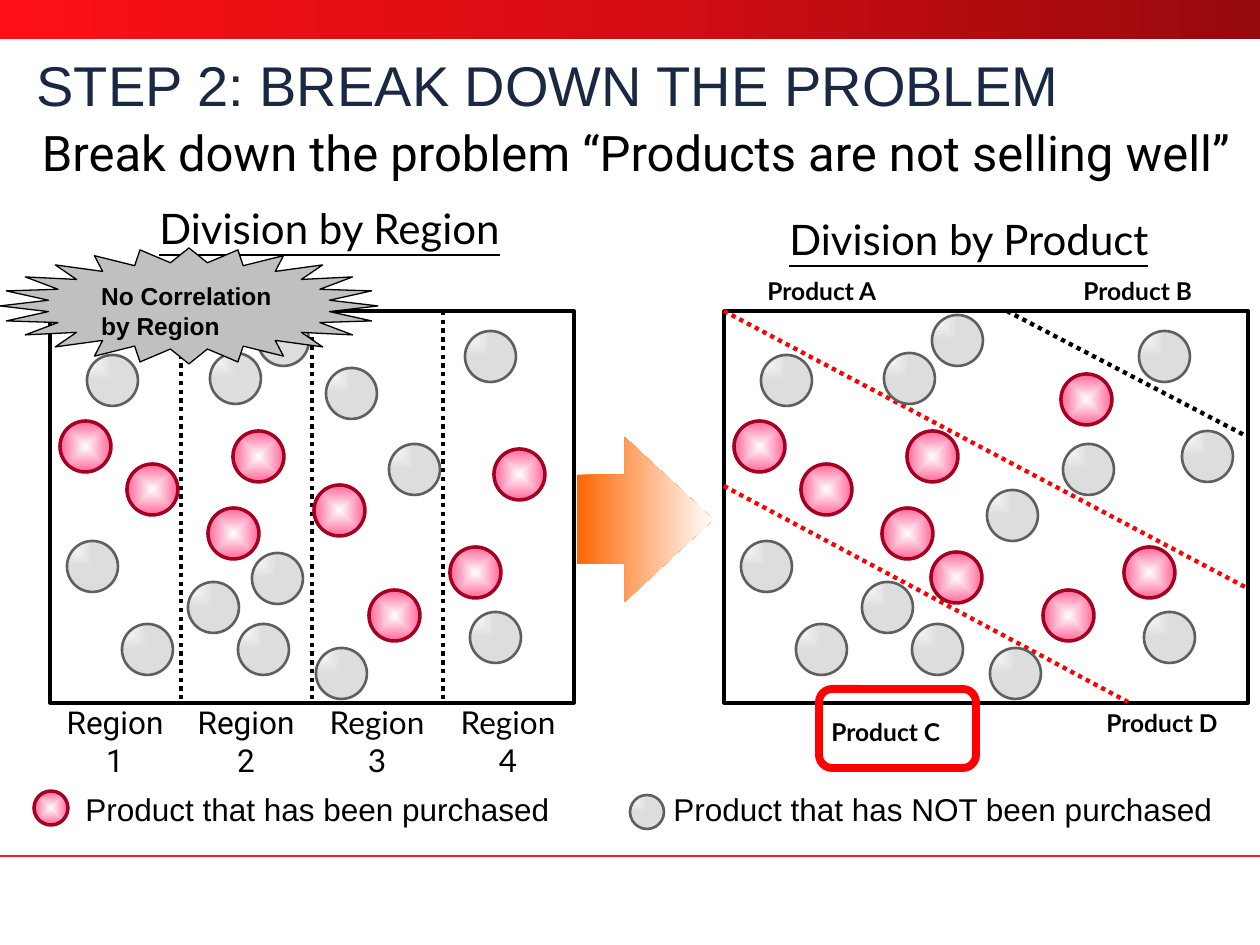
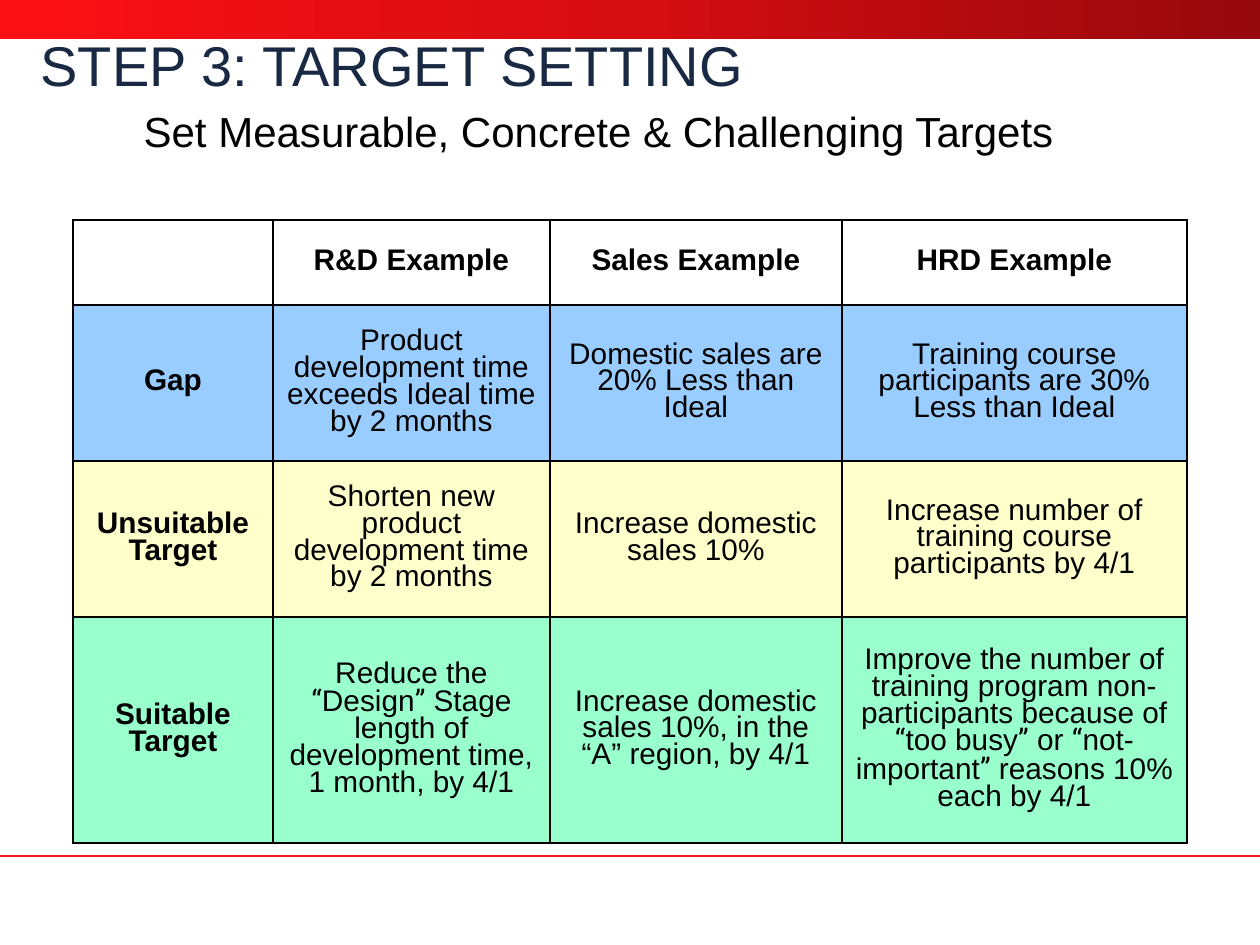
from dataclasses import dataclass
from typing import NamedTuple

import lxml.etree
import pptx
import pptx.dml.color
import pptx.enum.dml
import pptx.enum.shapes
import pptx.enum.text
import pptx.oxml.ns
import pptx.presentation
import pptx.shapes.autoshape
import pptx.shapes.connector
import pptx.slide
import pptx.util

RGBColor = pptx.dml.color.RGBColor
MSO_SHAPE = pptx.enum.shapes.MSO_SHAPE
PP_ALIGN = pptx.enum.text.PP_ALIGN
MSO_ANCHOR = pptx.enum.text.MSO_ANCHOR
qn = pptx.oxml.ns.qn

PX_PER_INCH = 126
BLACK = RGBColor(0x00, 0x00, 0x00)
WHITE = RGBColor(0xFF, 0xFF, 0xFF)
RED = RGBColor(0xFF, 0x00, 0x00)
NAVY = RGBColor(0x19, 0x29, 0x43)
BRIGHT_RED = RGBColor(0xFC, 0x10, 0x15)
BAND_RED = RGBColor(0xD5, 0x0D, 0x12)
DARK_RED = RGBColor(0x96, 0x09, 0x0D)
FOOTER_RED = RGBColor(0xED, 0x1F, 0x24)
ORANGE = RGBColor(0xFF, 0x66, 0x00)
PINK = RGBColor(0xFF, 0x66, 0x99)
CRIMSON = RGBColor(0xA5, 0x00, 0x21)
LIGHT_GRAY = RGBColor(0xDD, 0xDD, 0xDD)
DARK_GRAY = RGBColor(0x5F, 0x5F, 0x5F)
SILVER = RGBColor(0xC0, 0xC0, 0xC0)
BLUE = RGBColor(0x99, 0xCC, 0xFF)
YELLOW = RGBColor(0xFF, 0xFF, 0xCC)
GREEN = RGBColor(0x99, 0xFF, 0xCC)


class Box(NamedTuple):
    left: int
    top: int
    width: int
    height: int


@dataclass(frozen=True)
class Label:
    text: str
    box: Box
    font: str = "Arial"
    size: int = 18
    bold: bool = False
    underline: bool = False
    align: PP_ALIGN = PP_ALIGN.LEFT
    anchor: MSO_ANCHOR = MSO_ANCHOR.TOP
    wrap: bool = True
    color: RGBColor = BLACK


@dataclass(frozen=True)
class BallStyle:
    fill: RGBColor
    outline: RGBColor
    outline_points: float
    gradient_kind: str
    focus: tuple[int, int, int, int]


class BallGroup(NamedTuple):
    style: BallStyle
    positions: list[tuple[int, int]]


class Divider(NamedTuple):
    start: tuple[int, int]
    end: tuple[int, int]
    color: RGBColor


class TableRow(NamedTuple):
    fill: RGBColor
    cells: list[tuple[str, ...]]


PURCHASED = BallStyle(PINK, CRIMSON, 2, "shape", (50, 50, 50, 50))
NOT_PURCHASED = BallStyle(LIGHT_GRAY, DARK_GRAY, 1.5, "rect", (0, 0, 100, 100))
BALL_SIZE = 51
LEGEND_BALL_SIZE = 34

REGION_PANEL = Box(50, 311, 524, 392)
PRODUCT_SHIFT = 674
PRODUCT_PANEL = REGION_PANEL._replace(left=REGION_PANEL.left + PRODUCT_SHIFT)
REGION_WIDTH = REGION_PANEL.width // 4
PANEL_BOTTOM = REGION_PANEL.top + REGION_PANEL.height

COMMON_BALLS = [
    BallGroup(NOT_PURCHASED, [
        (122, 624), (67, 541), (87, 355), (188, 582), (238, 624), (316, 648),
        (210, 353), (258, 315), (389, 444), (470, 612), (465, 331)]),
    BallGroup(PURCHASED, [
        (60, 421), (127, 464), (208, 508), (233, 431), (369, 590), (450, 547)]),
]
REGION_BALLS = [
    BallGroup(NOT_PURCHASED, [(326, 368), (252, 553)]),
    BallGroup(PURCHASED, [(494, 449), (314, 485)]),
]
PRODUCT_BALLS = [
    BallGroup(NOT_PURCHASED, [(313, 490), (508, 431)]),
    BallGroup(PURCHASED, [(257, 552), (387, 374)]),
]
PRODUCT_DIVIDERS = [
    Divider((724, 486), (1128, 702), RED),
    Divider((724, 311), (1247, 588), RED),
    Divider((1007, 311), (1248, 437), BLACK),
]
REGION_FONTS = ["Roboto", "Roboto", "Lato", "Lato"]
BREAKDOWN_LABELS = [
    Label("Product that has been purchased", Box(73, 784, 514, 50)),
    Label("Product that has NOT been purchased", Box(661, 784, 577, 50)),
    Label("Division by Product", Box(777, 207, 386, 63), "Lato", 24,
          underline=True, wrap=False),
    Label("Division by Region", Box(147, 196, 366, 63), "Lato", 24,
          underline=True, wrap=False),
    Label("Product A", Box(755, 270, 233, 42), "Lato", 14, bold=True),
    Label("Product B", Box(1071, 270, 150, 42), "Lato", 14, bold=True),
    Label("Product C", Box(819, 711, 166, 42), "Lato", 14, bold=True),
    Label("Product D", Box(1094, 702, 166, 42), "Lato", 14, bold=True),
]
BREAKDOWN_HEADING = Label(
    "Break down the problem “Products are not selling well”",
    Box(0, 96, 1260, 111), "Roboto", 28, anchor=MSO_ANCHOR.MIDDLE, wrap=False)
CALLOUT = Label("No Correlation by Region", Box(0, 248, 378, 116), size=14, bold=True)
TARGET_HEADING = Label("Set Measurable, Concrete & Challenging Targets",
                       Box(90, 111, 1017, 78), size=24, align=PP_ALIGN.CENTER)

COLUMN_WIDTHS = [200, 277, 292, 345]
ROW_HEIGHTS = [85, 156, 156, 226]
TARGET_ROWS = [
    TableRow(WHITE, [("",), ("R&D Example",), ("Sales Example",), ("HRD Example",)]),
    TableRow(BLUE, [
        ("Gap",),
        ("Product development time exceeds Ideal time by 2 months",),
        ("Domestic sales are 20% Less than Ideal",),
        ("Training course participants are 30% Less than Ideal",)]),
    TableRow(YELLOW, [
        ("Unsuitable Target",),
        ("Shorten new product development time by 2 months",),
        ("Increase domestic sales 10%",),
        ("Increase number of training course participants by 4/1",)]),
    TableRow(GREEN, [
        ("Suitable Target",),
        ("Reduce the ", "“", "Design", "”",
         " Stage length of development time, 1 month, by 4/1"),
        ("Increase domestic sales 10%, in the “A” region, by 4/1",),
        ("Improve the number of training program non-participants because of ",
         "“", "too busy", "”", " or ", "“", "not-important", "”",
         " reasons 10% each by 4/1")]),
]


def px(length: int) -> pptx.util.Emu:
    return pptx.util.Emu(round(length * 914400 / PX_PER_INCH))


def place(box: Box) -> list[pptx.util.Emu]:
    return [px(length) for length in box]


def add_child(parent: lxml.etree._Element, tag: str, **attributes: object) -> lxml.etree._Element:
    return lxml.etree.SubElement(
        parent, qn(tag), {name: str(value) for name, value in attributes.items()})


def set_gradient(shape: pptx.shapes.autoshape.Shape, colors: list[RGBColor],
                 style: BallStyle | None = None) -> None:
    shape.fill.gradient()
    gradient = shape.element.spPr.find(qn("a:gradFill"))
    gradient.clear()
    stops = add_child(gradient, "a:gsLst")
    for index, color in enumerate(colors):
        stop = add_child(stops, "a:gs", pos=index * 100000 // (len(colors) - 1))
        add_child(stop, "a:srgbClr", val=color)
    if style is None:
        add_child(gradient, "a:lin", ang=0, scaled=0)
    else:
        center = add_child(gradient, "a:path", path=style.gradient_kind)
        edges = {edge: value * 1000 for edge, value in zip("ltrb", style.focus)}
        add_child(center, "a:fillToRect", **edges)


def add_figure(slide: pptx.slide.Slide, kind: MSO_SHAPE, box: Box,
               outline: RGBColor | None = None,
               outline_points: float = 1) -> pptx.shapes.autoshape.Shape:
    shape = slide.shapes.add_shape(kind, *place(box))
    shape.shadow.inherit = False
    shape.fill.background()
    if outline is None:
        shape.line.fill.background()
    else:
        shape.line.color.rgb = outline
        shape.line.width = pptx.util.Pt(outline_points)
    return shape


def add_line(slide: pptx.slide.Slide, line: Divider, points: float,
             dotted: bool = True) -> pptx.shapes.connector.Connector:
    connector = slide.shapes.add_connector(
        pptx.enum.shapes.MSO_CONNECTOR.STRAIGHT,
        *[px(length) for length in line.start + line.end])
    connector.line.color.rgb = line.color
    connector.line.width = pptx.util.Pt(points)
    if dotted:
        connector.line.dash_style = pptx.enum.dml.MSO_LINE.ROUND_DOT
    add_child(connector.element.spPr, "a:effectLst")
    return connector


def write_label(shape: pptx.shapes.autoshape.Shape, label: Label) -> None:
    frame = shape.text_frame
    frame.text = label.text
    frame.word_wrap = label.wrap
    frame.auto_size = pptx.enum.text.MSO_AUTO_SIZE.NONE
    frame.vertical_anchor = label.anchor
    paragraph = frame.paragraphs[0]
    paragraph.alignment = label.align
    font = paragraph.font
    font.name, font.size = label.font, pptx.util.Pt(label.size)
    font.bold, font.underline = label.bold, label.underline
    font.color.rgb = label.color


def add_label(slide: pptx.slide.Slide, label: Label) -> pptx.shapes.autoshape.Shape:
    shape = slide.shapes.add_textbox(*place(label.box))
    write_label(shape, label)
    return shape


def add_ball(slide: pptx.slide.Slide, style: BallStyle, left: int, top: int,
             size: int = BALL_SIZE) -> None:
    ball = add_figure(slide, MSO_SHAPE.OVAL, Box(left, top, size, size),
                      style.outline, style.outline_points)
    set_gradient(ball, [WHITE, style.fill], style)


def add_balls(slide: pptx.slide.Slide, groups: list[BallGroup], shift: int = 0) -> None:
    for group in groups:
        for left, top in group.positions:
            add_ball(slide, group.style, left + shift, top)


def add_step_slide(presentation: pptx.presentation.Presentation, title: str,
                   left: int, top: int) -> pptx.slide.Slide:
    slide = presentation.slides.add_slide(presentation.slide_layouts[5])
    band = add_figure(slide, MSO_SHAPE.RECTANGLE, Box(0, 0, 1260, 39))
    set_gradient(band, [BRIGHT_RED, BAND_RED, DARK_RED])
    add_line(slide, Divider((0, 856), (1260, 856), FOOTER_RED), 1, dotted=False)
    label = Label(title, Box(left, top, 1158, 84), size=32, color=NAVY)
    shape = slide.shapes.title
    shape.left, shape.top, shape.width, shape.height = place(label.box)
    write_label(shape, label)
    shape.text_frame.paragraphs[0].line_spacing = pptx.util.Pt(36)
    return slide


def build_breakdown_slide(presentation: pptx.presentation.Presentation) -> None:
    slide = add_step_slide(presentation, "STEP 2: BREAK DOWN THE PROBLEM", 24, 48)
    arrow = add_figure(slide, MSO_SHAPE.RIGHT_ARROW, Box(577, 437, 136, 165))
    arrow.adjustments[0], arrow.adjustments[1] = 0.54, 0.65
    set_gradient(arrow, [ORANGE, WHITE])
    add_ball(slide, PURCHASED, 34, 791, LEGEND_BALL_SIZE)
    add_ball(slide, NOT_PURCHASED, 630, 795, LEGEND_BALL_SIZE)

    region_panel = add_figure(slide, MSO_SHAPE.RECTANGLE, REGION_PANEL, BLACK, 2)
    for index in range(1, 4):
        x = REGION_PANEL.left + index * REGION_WIDTH
        divider = add_line(
            slide, Divider((x, REGION_PANEL.top), (x, PANEL_BOTTOM), BLACK), 2.5)
        if index == 2:
            divider.begin_connect(region_panel, 0)
            divider.end_connect(region_panel, 2)
    add_balls(slide, COMMON_BALLS + REGION_BALLS)

    add_figure(slide, MSO_SHAPE.RECTANGLE, PRODUCT_PANEL, BLACK, 2)
    for line in PRODUCT_DIVIDERS:
        add_line(slide, line, 2.5)
    add_balls(slide, COMMON_BALLS + PRODUCT_BALLS, PRODUCT_SHIFT)

    for index, font in enumerate(REGION_FONTS):
        box = Box(REGION_PANEL.left + index * REGION_WIDTH, 697, 130, 89)
        add_label(slide, Label(f"Region {index + 1}", box, font, align=PP_ALIGN.CENTER))
    for label in BREAKDOWN_LABELS:
        add_label(slide, label)
    add_figure(slide, MSO_SHAPE.ROUNDED_RECTANGLE, Box(819, 689, 157, 79), RED, 4.5)
    heading = add_label(slide, BREAKDOWN_HEADING)
    heading.text_frame.margin_left = px(42)
    callout = add_figure(slide, MSO_SHAPE.STAR_24_POINT, CALLOUT.box, BLACK, 0.75)
    callout.fill.solid()
    callout.fill.fore_color.rgb = SILVER
    write_label(callout, CALLOUT)


def build_target_slide(presentation: pptx.presentation.Presentation) -> None:
    slide = add_step_slide(presentation, "STEP 3: TARGET SETTING", 28, 28)
    heading = add_label(slide, TARGET_HEADING).text_frame
    heading.margin_left = heading.margin_right = heading.margin_top = heading.margin_bottom = 0
    heading.paragraphs[0].line_spacing = 0.9

    box = Box(73, 220, sum(COLUMN_WIDTHS), sum(ROW_HEIGHTS))
    table = slide.shapes.add_table(len(ROW_HEIGHTS), len(COLUMN_WIDTHS), *place(box)).table
    table.first_row = table.horz_banding = False
    for column, width in zip(table.columns, COLUMN_WIDTHS):
        column.width = px(width)
    for row_index, row in enumerate(TARGET_ROWS):
        table.rows[row_index].height = px(ROW_HEIGHTS[row_index])
        for column_index, segments in enumerate(row.cells):
            cell = table.cell(row_index, column_index)
            cell.vertical_anchor = MSO_ANCHOR.MIDDLE
            cell.margin_top = cell.margin_bottom = px(3)
            for side in "LRTB":
                border = add_child(cell._tc.get_or_add_tcPr(), f"a:ln{side}", w=12700)
                add_child(add_child(border, "a:solidFill"), "a:srgbClr", val=BLACK)
            cell.fill.solid()
            cell.fill.fore_color.rgb = row.fill
            paragraph = cell.text_frame.paragraphs[0]
            paragraph.alignment = PP_ALIGN.CENTER
            paragraph.line_spacing = 0.8
            font = paragraph.font
            font.name, font.size = "Arial", pptx.util.Pt(17)
            font.bold = row_index == 0 or column_index == 0
            font.color.rgb = BLACK
            for segment in filter(None, segments):
                run = paragraph.add_run()
                run.text = segment
                if segment in ("“", "”"):
                    run.font.name = "Roboto"


def main() -> None:
    presentation = pptx.Presentation()
    presentation.slide_width, presentation.slide_height = px(1260), px(945)
    build_breakdown_slide(presentation)
    build_target_slide(presentation)
    presentation.save("out.pptx")


if __name__ == "__main__":
    main()
